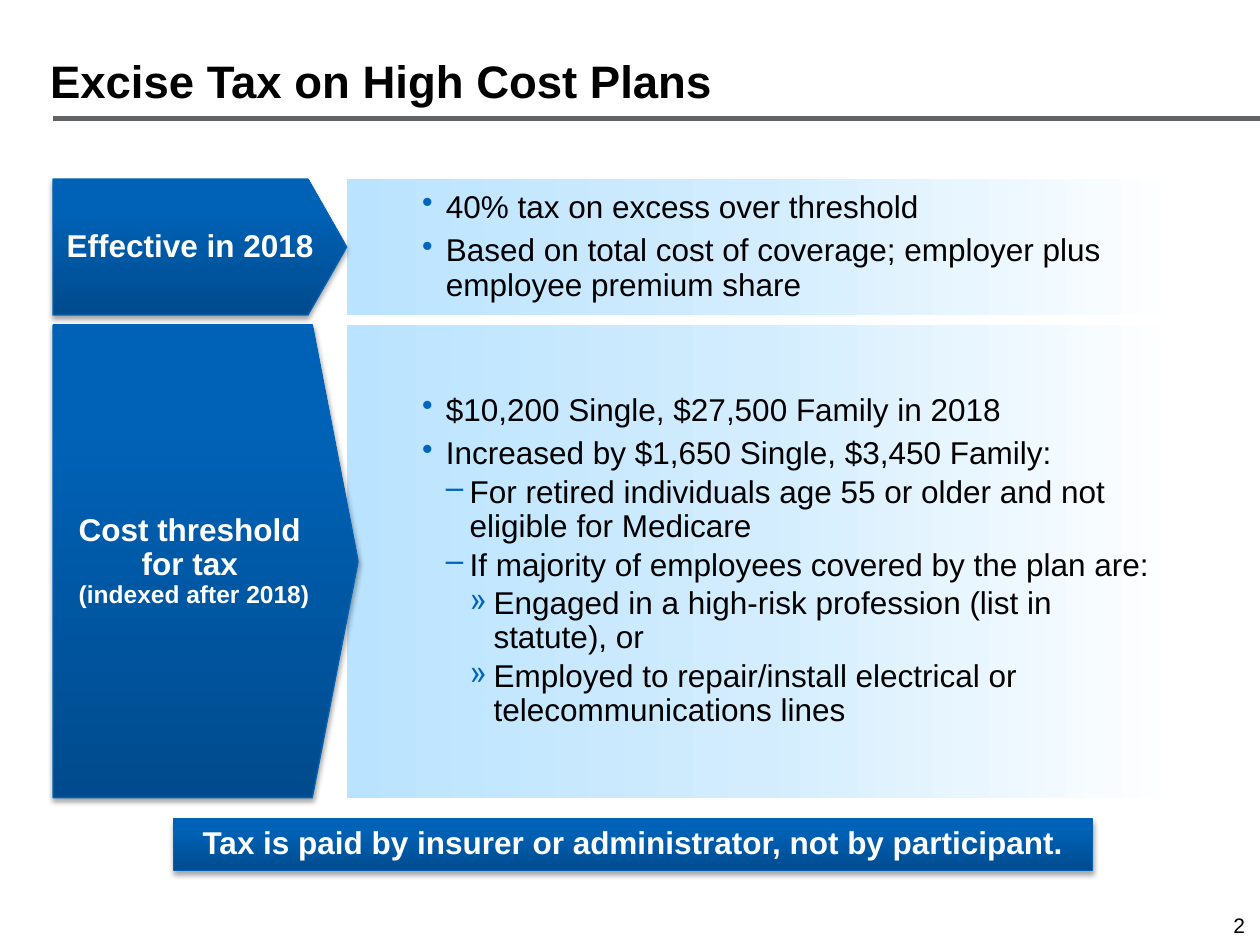
from lxml import etree
from pptx import Presentation
from pptx.dml.color import RGBColor
from pptx.enum.shapes import MSO_CONNECTOR as Conn, MSO_SHAPE as Shape
from pptx.enum.text import MSO_ANCHOR as Anchor, PP_ALIGN as Align
from pptx.oxml.ns import qn
from pptx.util import Cm, Pt

PALE = [(0, "BAE3FF"), (50, "D3EDFE"), (100, "FFFFFF")]
DEEP = [(0, "004B8D"), (80, "0062B7"), (100, "0062B8")]
MARKS = {1: "•", 2: "–", 3: "»"}


def color(code):
    return RGBColor.from_string(code)


def sub(parent, tag, **attrs):
    return etree.SubElement(parent, qn(tag), attrs)


def put_text(para, text, size=18, bold=False, ink="000000", align=Align.LEFT,
             before=0):
    """Add text to a paragraph; a newline becomes a line break."""
    para.alignment = align
    para.line_spacing = 0.9
    para.space_before = Pt(before)
    for i, line in enumerate(text.split("\n")):
        if i:
            para.add_line_break()
        if line:
            run = para.add_run()
            run.text = line
            font = run.font
            font.name, font.size, font.bold = "Arial", Pt(size), bold
            font.color.rgb = color(ink)


def set_frame(shape, anchor=Anchor.MIDDLE, side=0.25, edge=0.13):
    frame = shape.text_frame
    frame.word_wrap = True
    frame.vertical_anchor = anchor
    frame.margin_left = frame.margin_right = Cm(side)
    frame.margin_top = frame.margin_bottom = Cm(edge)
    return frame


def add_bullet(para, level):
    para.level = level
    props = para._p.get_or_add_pPr()
    props.set("marL", str(Cm(1.27 + 0.48 * level)))
    props.set("indent", str(Cm(-0.48)))
    sub(sub(props, "a:buClr"), "a:srgbClr", val="0065BD")
    sub(props, "a:buChar", char=MARKS[level])


def add_block(slide, kind, box, stops, angle):
    """Draw a gradient shape without line or shadow."""
    shape = slide.shapes.add_shape(kind, *map(Cm, box))
    shape.shadow.inherit = False
    shape.line.fill.background()
    shape.fill.gradient()
    shape.fill.gradient_angle = angle
    stop_list = shape._element.spPr.find(".//" + qn("a:gsLst"))
    for old in list(stop_list):
        stop_list.remove(old)
    for pos, code in stops:
        stop = sub(stop_list, "a:gs", pos=str(pos * 1000))
        sub(stop, "a:srgbClr", val=code)
    return shape


def add_label(slide, kind, box, parts, side=0.12, edge=0.13):
    """Draw a raised blue shape with centred white text."""
    shape = add_block(slide, kind, box, DEEP, 90)
    shape.line.color.rgb = color("0063B9")
    shape.line.width = Pt(0.75)
    effects = shape._element.spPr.find(qn("a:effectLst"))
    shade = sub(effects, "a:outerShdw", blurRad=str(Pt(3.1)),
                dist=str(Pt(1.8)), dir="5400000", rotWithShape="0")
    sub(sub(shade, "a:srgbClr", val="000000"), "a:alpha", val="35000")
    para = set_frame(shape, side=side, edge=edge).paragraphs[0]
    for text, size in parts:
        put_text(para, text, size=size, bold=True, ink="FFFFFF",
                 align=Align.CENTER)
    return shape


def add_row(slide, box, tip, adj, parts, items):
    """Place a bullet panel and the arrow that points into it."""
    left, top, width, height = box
    inset = 5.92
    panel = add_block(slide, Shape.RECTANGLE,
                      (left + inset, top, width - inset, height), PALE, 0)
    frame = set_frame(panel)
    for i, (level, text) in enumerate(items):
        para = frame.add_paragraph() if i else frame.paragraphs[0]
        add_bullet(para, level)
        gap = 5.4 if level == 1 else 2.7
        put_text(para, text, before=gap if i else 0)
    arrow = add_label(slide, Shape.PENTAGON, (left, top, tip, height), parts)
    arrow.adjustments[0] = adj


def add_header(slide, box):
    """Place the title and the rule below it."""
    left, top, width, height = box
    title = slide.shapes.title
    title.left, title.top, title.width, title.height = map(Cm, box)
    frame = set_frame(title, Anchor.BOTTOM)
    put_text(frame.paragraphs[0], "Excise Tax on High Cost Plans", size=26,
             bold=True)
    level = Cm(top + height + 0.08)
    rule = slide.shapes.add_connector(Conn.STRAIGHT, Cm(left + 0.31), level,
                                      Cm(25.4), level)
    rule.line.color.rgb = color("616365")
    rule.line.width = Pt(3)
    sub(rule._element.spPr, "a:effectLst")


def add_number(slide, box):
    frame = set_frame(slide.shapes.add_textbox(*map(Cm, box)))
    put_text(frame.paragraphs[0], "2", size=12, align=Align.RIGHT)


def main():
    deck = Presentation()
    deck.slide_width, deck.slide_height = Cm(25.4), Cm(19.05)
    slide = deck.slides.add_slide(deck.slide_layouts[5])
    add_header(slide, (0.76, 0.2, 24.21, 2.11))

    # Rows
    add_row(slide, (1.07, 3.61, 22.68, 2.74), 5.92, 0.285,
            [("Effective in 2018", 18)],
            [(1, "40% tax on excess over threshold"),
             (1, "Based on total cost of coverage; employer plus employee "
                 "premium share")])
    add_row(slide, (1.07, 6.55, 22.68, 9.53), 6.15, 0.15,
            [("Cost threshold \nfor tax \n", 18),
             ("(indexed after 2018)", 14)],
            [(1, "$10,200 Single, $27,500 Family in 2018"),
             (1, "Increased by $1,650 Single, $3,450 Family:"),
             (2, "For retired individuals age 55 or older and not eligible "
                 "for Medicare"),
             (2, "If majority of employees covered by the plan are:"),
             (3, "Engaged in a high-risk profession (list in statute), or"),
             (3, "Employed to repair/install electrical or "
                 "telecommunications lines")])

    # Banner and page number
    add_label(slide, Shape.RECTANGLE, (3.5, 16.51, 18.52, 1.04),
              [("Tax is paid by insurer or administrator, not by "
                "participant.", 18)], side=0.18, edge=0.18)
    add_number(slide, (23.83, 18.36, 1.52, 0.64))
    deck.save("out.pptx")


if __name__ == "__main__":
    main()
